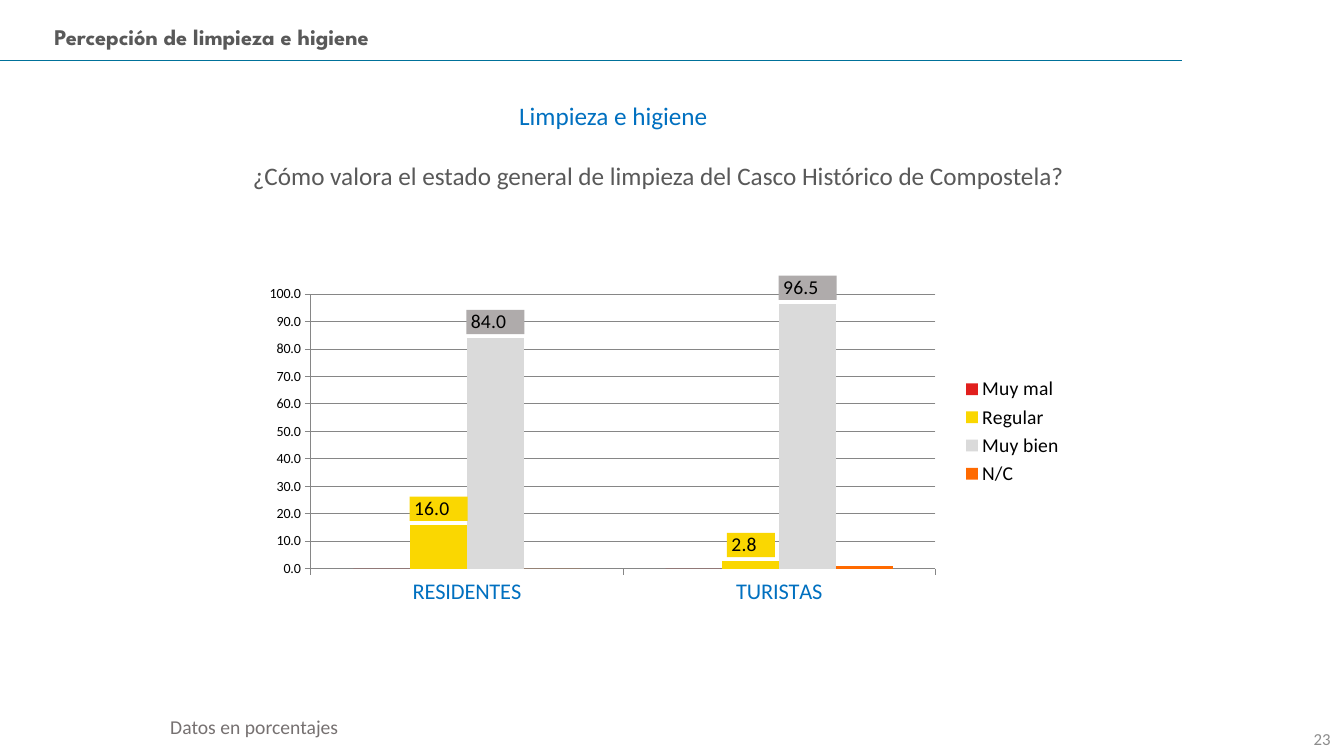
import pptx
import pptx.chart.data
import pptx.dml.color
import pptx.enum.chart
import pptx.enum.shapes
import pptx.enum.text
import pptx.oxml
import pptx.oxml.ns
import pptx.util

Pt = pptx.util.Pt
qn = pptx.oxml.ns.qn
ALIGN = pptx.enum.text.PP_ALIGN
ANCHOR = pptx.enum.text.MSO_ANCHOR
CHART = pptx.enum.chart
BLUE, GREY, RULE = "0070C0", "595959", "868686"


def color(code):
    return pptx.dml.color.RGBColor.from_string(code)


def node(text):
    """Build an XML fragment that uses the a: and c: prefixes."""
    head, rest = text.split(">", 1)
    slash = "/" if head.endswith("/") else ""
    names = pptx.oxml.ns.nsdecls("a", "c")
    return pptx.oxml.parse_xml(f"{head.rstrip('/')} {names}{slash}>{rest}")


class Page:
    font = "Calibri"

    def __init__(self, deck):
        self.slide = deck.slides.add_slide(deck.slide_layouts[5])

    def style(self, shape, text, size, ink, align, anchor=ANCHOR.TOP,
              font=None, bold=False):
        frame = shape.text_frame
        frame.text = text
        frame.word_wrap = True
        frame.vertical_anchor = anchor
        para = frame.paragraphs[0]
        para.alignment = align
        face = para.runs[0].font
        face.name, face.size, face.bold = font or self.font, Pt(size), bold
        face.color.rgb = color(ink)

    def title(self, box, text, size, ink, font):
        shape = self.slide.shapes.title
        shape.left, shape.top, shape.width, shape.height = map(Pt, box)
        self.style(shape, text, size, ink, ALIGN.LEFT, font=font, bold=True)

    def text(self, box, text, size, ink, align=ALIGN.LEFT, anchor=ANCHOR.TOP):
        shape = self.slide.shapes.add_textbox(*map(Pt, box))
        self.style(shape, text, size, ink, align, anchor)

    def line(self, start, end, ink, width):
        kind = pptx.enum.shapes.MSO_CONNECTOR.STRAIGHT
        rule = self.slide.shapes.add_connector(kind, *map(Pt, start + end))
        rule.line.color.rgb = color(ink)
        rule.line.width = Pt(width)
        rule.element.spPr.append(node("<a:effectLst/>"))

    def chart(self, box, cats, rows, plot):
        data = pptx.chart.data.CategoryChartData(number_format="0.0")
        data.categories = cats
        for name, vals, _, _ in rows:
            data.add_series(name, vals)
        kind = CHART.XL_CHART_TYPE.COLUMN_CLUSTERED
        chart = self.slide.shapes.add_chart(kind, *map(Pt, box), data).chart
        chart.has_title = False
        chart.font.name, chart.font.size = self.font, Pt(10)
        chart.font.color.rgb = color("000000")
        self.legend(chart)
        self.axes(chart)
        self.bars(chart, rows)
        self.place(chart, plot)

    def legend(self, chart):
        chart.has_legend = True
        chart.legend.position = CHART.XL_LEGEND_POSITION.RIGHT
        chart.legend.include_in_layout = False
        chart.legend.font.size = Pt(14)

    def axes(self, chart):
        cat, val = chart.category_axis, chart.value_axis
        val.minimum_scale, val.maximum_scale, val.major_unit = 0, 100, 10
        val.has_major_gridlines = True
        val.tick_labels.number_format = "0.0"
        val.tick_labels.number_format_is_linked = False
        cat.tick_labels.font.size = Pt(16)
        cat.tick_labels.font.color.rgb = color(BLUE)
        for axis in (cat, val):
            axis.major_tick_mark = CHART.XL_TICK_MARK.OUTSIDE
        for part in (cat, val, val.major_gridlines):
            part.format.line.color.rgb = color(RULE)
            part.format.line.width = Pt(0.75)

    def bars(self, chart, rows):
        plot = chart.plots[0]
        plot.gap_width, plot.overlap, plot.vary_by_categories = 150, 0, False
        for bar, (_, _, fill, tint) in zip(plot.series, rows):
            bar.format.fill.solid()
            bar.format.fill.fore_color.rgb = color(fill)
            if tint:
                tags = bar.data_labels
                tags.show_value = True
                tags.number_format = r"_-* #,##0.0\ _€_-"
                tags.number_format_is_linked = False
                tags.position = CHART.XL_LABEL_POSITION.OUTSIDE_END
                tags.font.size = Pt(14)
        # Coloured plates behind the labels
        tints = [row[3] for row in rows if row[3]]
        for tags, tint in zip(chart.element.iter(qn("c:dLbls")), tints):
            tags.find(qn("c:txPr")).addprevious(node(
                f'<c:spPr><a:solidFill><a:srgbClr val="{tint}"/>'
                "</a:solidFill></c:spPr>"))

    def place(self, chart, plot):
        area = next(chart.element.iter(qn("c:plotArea")))
        for old in area.findall(qn("c:layout")):
            area.remove(old)
        parts = '<c:layoutTarget val="inner"/>'
        parts += "".join(f'<c:{key}Mode val="edge"/>' for key in "xy")
        parts += "".join(f'<c:{key} val="{val}"/>'
                         for key, val in zip("xywh", plot))
        area.insert(0, node("<c:layout><c:manualLayout>" + parts +
                            "</c:manualLayout></c:layout>"))


def main():
    deck = pptx.Presentation()
    deck.slide_width, deck.slide_height = Pt(960), Pt(540)
    page = Page(deck)

    # Header and page number
    page.line((0, 43.3), (844.6, 43.3), "00719A", 1)
    page.title((31.7, 13, 841, 26.6), "Percepción de limpieza e higiene",
               16, GREY, "League Spartan")
    page.text((741.6, 509.8, 216, 28.8), "23", 12, "8C8C8C",
              ALIGN.RIGHT, ANCHOR.BOTTOM)

    # Topic and question
    page.text((109.4, 68.4, 657.4, 29), "Limpieza e higiene",
              18, BLUE, ALIGN.CENTER)
    page.text((131, 110.9, 682.6, 29),
              "¿Cómo valora el estado general de limpieza "
              "del Casco Histórico de Compostela? ", 18, GREY, ALIGN.CENTER)

    # Ratings: name, values, bar fill, label fill
    rows = [
        ("Muy mal", (0, 0), "E11F1D", None),
        ("Regular", (16, 2.8), "FAD701", "FAD701"),
        ("Muy bien", (84, 96.5), "DADADA", "AFABAB"),
        ("N/C", (0, 1), "FF6A00", None),
    ]
    page.chart((187.2, 175.7, 579.6, 265), ("RESIDENTES", "TURISTAS"), rows,
               (0.06, 0.13, 0.77, 0.74))

    # Footnote
    page.text((114.5, 506.9, 689.8, 24.5), "Datos en porcentajes",
              14, "767171")

    deck.save("out.pptx")


if __name__ == "__main__":
    main()
